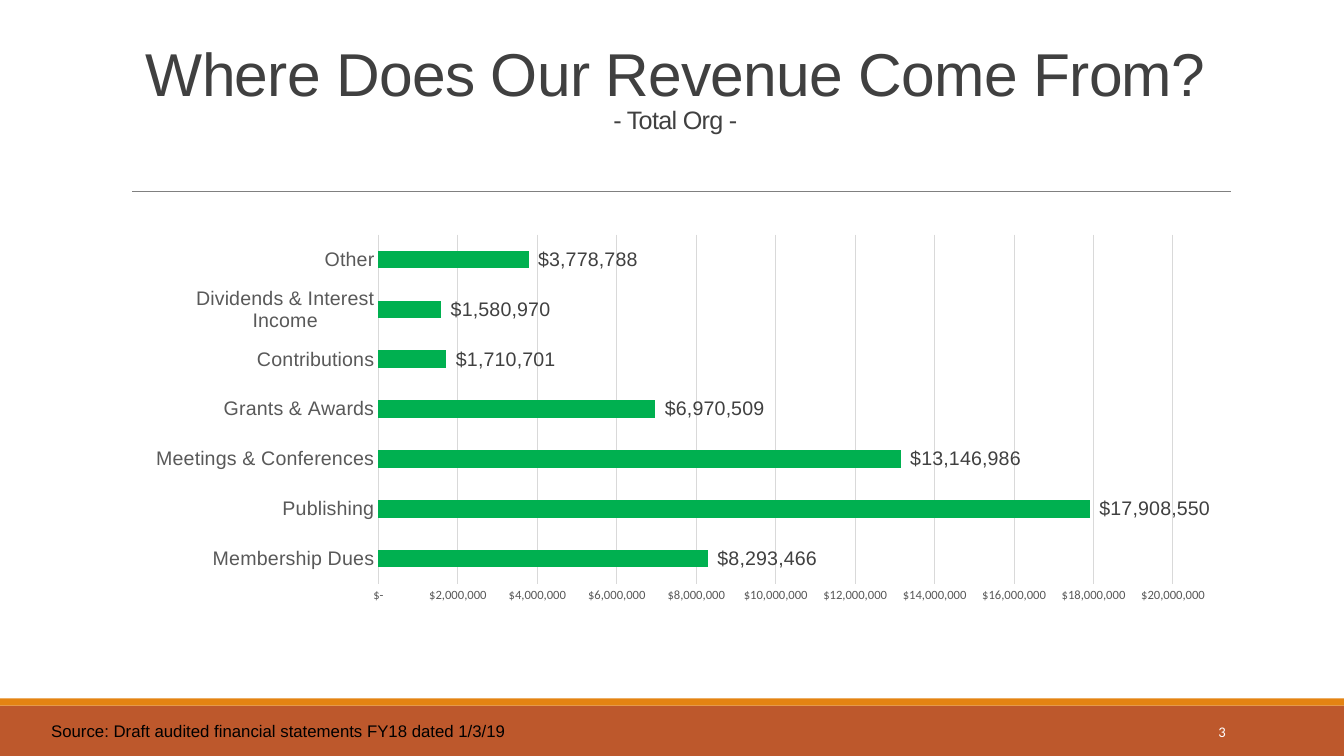
from lxml import etree
from pptx import Presentation
from pptx.chart.data import CategoryChartData as ChartData
from pptx.dml.color import RGBColor as Rgb
from pptx.enum.chart import XL_CHART_TYPE as Kind, XL_LABEL_POSITION as Spot
from pptx.enum.chart import XL_TICK_MARK as Tick
from pptx.enum.shapes import MSO_CONNECTOR as Link, MSO_SHAPE as Shape
from pptx.enum.text import MSO_ANCHOR as Anchor, PP_ALIGN as Align
from pptx.oxml.ns import qn
from pptx.util import Cm, Pt

WIDE, HIGH = 33.87, 19.05
HUES = {"rust": "BD582C", "amber": "E48312", "rule": "808080", "title": "404040",
        "axis": "595959", "grid": "D9D9D9", "bar": "00B050",
        "white": "FFFFFF", "black": "000000"}
MONEY = r'_("$"* #,##0_);_("$"* \(#,##0\);_("$"* "-"_);_(@_)'
SUMS = {"Membership Dues": 8293466, "Publishing": 17908550,
        "Meetings & Conferences": 13146986, "Grants & Awards": 6970509,
        "Contributions": 1710701, "Dividends & Interest Income": 1580970,
        "Other": 3778788}


def hue(name):
    return Rgb.from_string(HUES[name])


def assign(item, form):
    for key, value in form.items():
        setattr(item, key, value)


def style(font, size, color, face="Arial"):
    assign(font, {"size": Pt(size), "name": face})
    font.color.rgb = hue(color)


def stroke(line, color, width):
    line.color.rgb = hue(color)
    line.width = Pt(width)


def add_text(slide, box, anchor, align):
    """Add an empty text box and return its first paragraph."""
    frame = slide.shapes.add_textbox(*map(Cm, box)).text_frame
    assign(frame, {"word_wrap": True, "vertical_anchor": anchor})
    para = frame.paragraphs[0]
    para.alignment = align
    return para


def add_run(para, text, *font):
    run = para.add_run()
    run.text = text
    style(run.font, *font)
    return run


def add_title(slide, box):
    para = add_text(slide, box, Anchor.BOTTOM, Align.CENTER)
    para.line_spacing = 0.85
    head = add_run(para, "Where Does Our Revenue Come From?", 43.2, "title")
    para.add_line_break()
    sub = add_run(para, "- Total Org -", 18, "title")
    for run in (head, sub):
        run.font._element.set("spc", "-50")


def add_rule(slide, left, top, width):
    line = slide.shapes.add_connector(
        Link.STRAIGHT, *map(Cm, (left, top, left + width, top)))
    stroke(line.line, "rule", 0.5)
    etree.SubElement(line._element.spPr, qn("a:effectLst"))


def add_bars(slide, box):
    data = ChartData(number_format=MONEY)
    data.categories = list(SUMS)
    data.add_series("Series 1", list(SUMS.values()))
    chart = slide.shapes.add_chart(Kind.BAR_CLUSTERED, *map(Cm, box), data).chart
    assign(chart, {"has_legend": False, "has_title": False})
    style(chart.font, 10, "black", "Calibri")

    # Axes
    cats, vals = chart.category_axis, chart.value_axis
    quiet = {"major_tick_mark": Tick.NONE, "minor_tick_mark": Tick.NONE}
    assign(cats, quiet)
    assign(vals, quiet | {"minimum_scale": 0, "maximum_scale": 20_000_000,
                          "major_unit": 2_000_000, "has_major_gridlines": True})
    style(cats.tick_labels.font, 14, "axis")
    style(vals.tick_labels.font, 9, "axis", "Calibri")
    stroke(cats.format.line, "grid", 0.75)
    stroke(vals.major_gridlines.format.line, "grid", 0.75)
    vals.format.line.fill.background()

    # Bars and their labels
    plot = chart.plots[0]
    assign(plot, {"gap_width": 182, "vary_by_categories": False,
                  "has_data_labels": True})
    fill = plot.series[0].format.fill
    fill.solid()
    fill.fore_color.rgb = hue("bar")
    labels = plot.data_labels
    assign(labels, {"show_value": True, "position": Spot.OUTSIDE_END})
    style(labels.font, 14, "title")
    for part in (labels, vals.tick_labels):
        assign(part, {"number_format": MONEY, "number_format_is_linked": False})


def add_footer(slide, left, top, width, height):
    edge = 0.18
    bands = (("rust", top + edge, height - edge), ("amber", top, edge))
    for color, y, tall in bands:
        band = slide.shapes.add_shape(
            Shape.RECTANGLE, *map(Cm, (left, y, width, tall)))
        band.shadow.inherit = False
        band.fill.solid()
        band.fill.fore_color.rgb = hue(color)
        band.line.fill.background()
    note = add_text(slide, (left + 1.04, top + 0.43, 18.34, 0.77),
                    Anchor.TOP, Align.LEFT)
    add_run(note, "Source: Draft audited financial statements FY18 dated 1/3/19",
            12, "black")
    page = add_text(slide, (left + 27.51, top + 0.33, 3.63, 1.02),
                    Anchor.MIDDLE, Align.RIGHT)
    add_run(page, "3", 10.5, "white", "Calibri")


def main():
    deck = Presentation()
    assign(deck, {"slide_width": Cm(WIDE), "slide_height": Cm(HIGH)})
    slide = deck.slides.add_slide(deck.slide_layouts[6])
    add_footer(slide, 0, 17.6, WIDE, HIGH - 17.6)
    add_rule(slide, 3.33, 4.82, 27.68)
    add_title(slide, (3.05, 0.79, 27.94, 2.72))
    add_bars(slide, (3.38, 5.72, 27.61, 9.65))
    deck.save("out.pptx")


if __name__ == "__main__":
    main()
